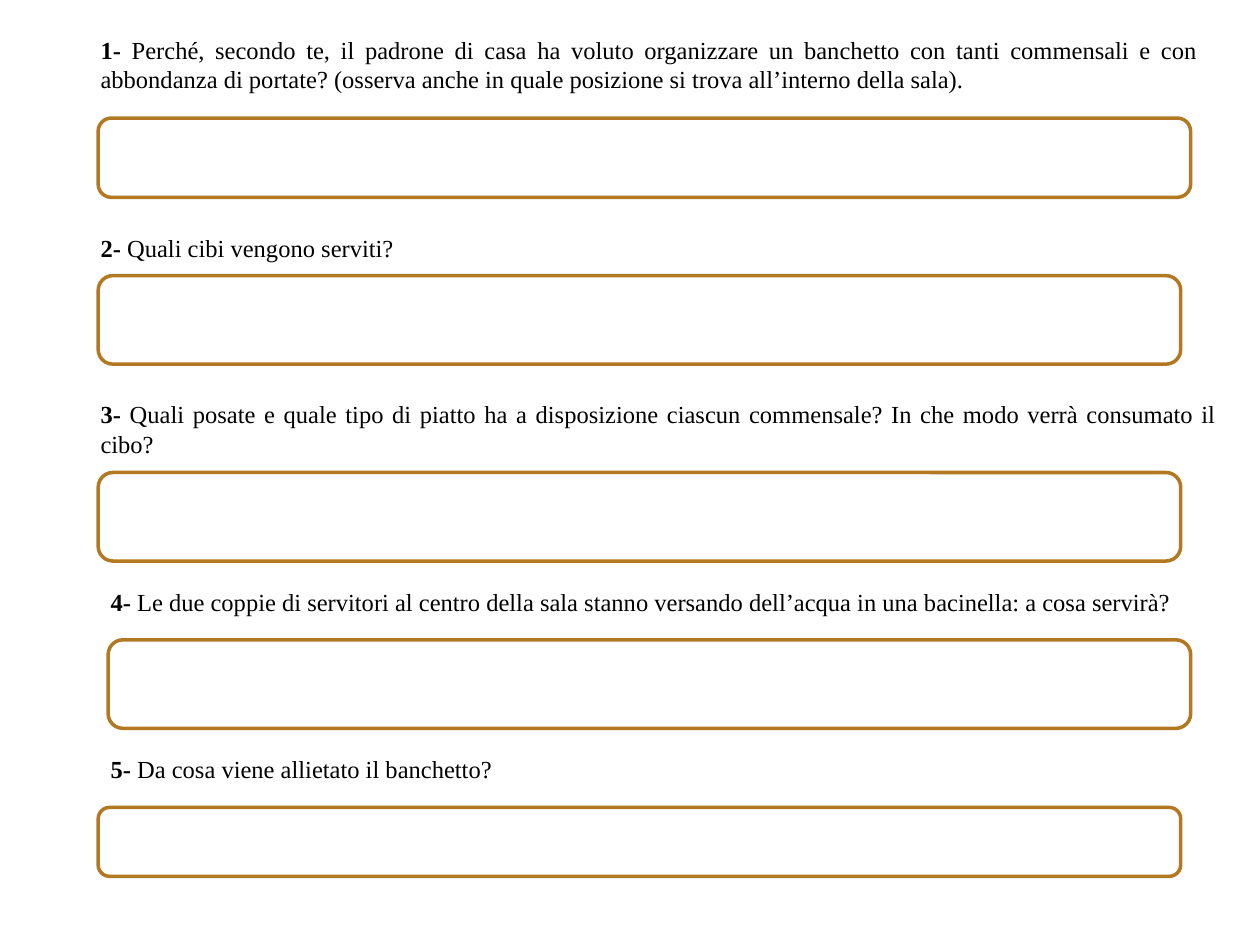
from collections import namedtuple

from pptx import Presentation
from pptx.dml.color import RGBColor
from pptx.enum.shapes import MSO_SHAPE
from pptx.enum.text import MSO_AUTO_SIZE, PP_ALIGN
from pptx.util import Pt

ROUNDED = MSO_SHAPE.ROUNDED_RECTANGLE
GROW = MSO_AUTO_SIZE.SHAPE_TO_FIT_TEXT
JUSTIFY = PP_ALIGN.JUSTIFY

Box = namedtuple("Box", "left top width height")

QUESTION_FONT = {"name": "Times New Roman", "size": Pt(14)}
FRAME_FORMAT = {"word_wrap": True, "auto_size": GROW}

QUESTIONS = [
    ("Perché, secondo te, il padrone di casa ha voluto organizzare un banchetto "
     "con tanti commensali e con abbondanza di portate? (osserva anche in quale "
     "posizione si trova all’interno della sala).",
     Box(50.4, 16.4, 641.6, 41.2), Box(56.1, 67.5, 624.3, 45.3)),
    ("Quali cibi vengono serviti?",
     Box(50.4, 129.4, 652.3, 24.2), Box(56.1, 157.5, 618.6, 50.6)),
    ("Quali posate e quale tipo di piatto ha a disposizione ciascun commensale? "
     "In che modo verrà consumato il cibo?",
     Box(50.4, 224.6, 652.3, 41.2), Box(56.1, 270, 618.6, 50.6)),
    ("Le due coppie di servitori al centro della sala stanno versando dell’acqua "
     "in una bacinella: a cosa servirà?",
     Box(56.1, 331.8, 652.3, 24.2), Box(61.8, 365.6, 618.6, 50.6)),
    ("Da cosa viene allietato il banchetto?",
     Box(56.1, 427.4, 652.3, 24.2), Box(56.1, 461.4, 618.6, 39.4)),
]


def color(value):
    return RGBColor.from_string(value)


def points(box):
    return [Pt(length) for length in box]


def apply_format(target, values):
    for name, value in values.items():
        setattr(target, name, value)


def add_question(slide, box, number, text):
    frame = slide.shapes.add_textbox(*points(box)).text_frame
    apply_format(frame, FRAME_FORMAT)
    paragraph = frame.paragraphs[0]
    paragraph.alignment = JUSTIFY
    for content, bold in ((f"{number}- ", True), (text, False)):
        run = paragraph.add_run()
        run.text = content
        apply_format(run.font, {**QUESTION_FONT, "bold": bold})
        run.font.color.rgb = color("000000")


def add_answer_box(slide, box):
    shape = slide.shapes.add_shape(ROUNDED, *points(box))
    shape.shadow.inherit = False
    shape.fill.solid()
    shape.fill.fore_color.rgb = color("FFFFFF")
    shape.line.color.rgb = color("B27822")
    shape.line.width = Pt(2)


def main():
    presentation = Presentation()
    presentation.slide_width = Pt(720)
    presentation.slide_height = Pt(540)
    slide = presentation.slides.add_slide(presentation.slide_layouts[6])
    for number, (text, question_box, answer_box) in enumerate(QUESTIONS, 1):
        add_question(slide, question_box, number, text)
        add_answer_box(slide, answer_box)
    presentation.save("out.pptx")


if __name__ == "__main__":
    main()
